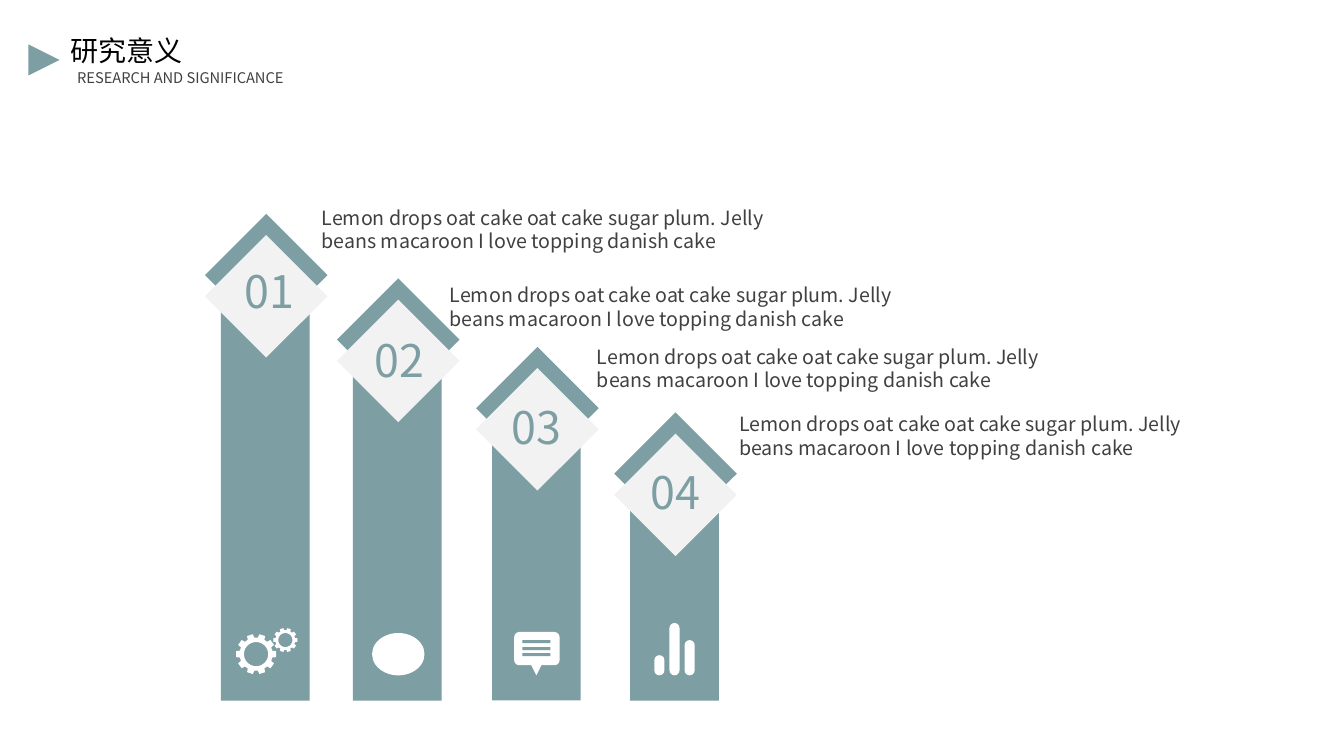
import math

from lxml import etree
from pptx import Presentation
from pptx import util as u
from pptx.dml import color
from pptx.enum import shapes, text
from pptx.oxml import ns

PX = 9144
COLORS = {"teal": "7D9EA3", "light": "F2F2F2", "white": "FFFFFF", "black": "000000", "gray": "404040"}
FONT = "Noto Sans CJK SC"
SHAPE = shapes.MSO_SHAPE
DIAMOND_SIDE = 86
BAR_WIDTH = 88
BAR_BOTTOM = 695
CAPTION = "Lemon drops oat cake oat cake sugar plum. Jelly beans macaroon I love topping danish cake"


class SlideBuilder:
    def __init__(self, slide):
        self.slide = slide

    def paint(self, shape, fill):
        shape.shadow.inherit = False
        shape.fill.solid()
        shape.fill.fore_color.rgb = color.RGBColor.from_string(COLORS[fill])
        shape.line.fill.background()

    def shape(self, kind, box, fill, rotation=0, corner=None):
        shape = self.slide.shapes.add_shape(kind, *(v * PX for v in box))
        self.paint(shape, fill)
        shape.rotation = rotation
        if corner is not None:
            shape.adjustments[0] = corner

    def text(self, content, box, size, fill, wrap=True, centered=False, inset=True, line_pt=None):
        frame = self.slide.shapes.add_textbox(*(v * PX for v in box)).text_frame
        frame.text = content
        frame.word_wrap = wrap
        if not inset:
            frame.margin_left = frame.margin_top = frame.margin_right = frame.margin_bottom = 0
        paragraph = frame.paragraphs[0]
        if centered:
            paragraph.alignment = text.PP_ALIGN.CENTER
        if line_pt:
            paragraph.line_spacing = u.Pt(line_pt)
        font = paragraph.runs[0].font
        font.size = u.Pt(size)
        font.name = FONT
        font.color.rgb = color.RGBColor.from_string(COLORS[fill])
        properties = paragraph.runs[0]._r.get_or_add_rPr()
        etree.SubElement(properties, ns.qn("a:ea"), typeface=FONT)

    def gear(self, center, tip, root, hole, fill, teeth=10):
        def point(radius, angle):
            return tuple(PX * (c + radius * f(angle)) for c, f in zip(center, (math.cos, math.sin)))

        tooth = [(root, -0.21), (tip, -0.15), (tip, 0.15), (root, 0.21)]
        rim = [point(radius, math.tau * i / teeth + turn) for i in range(teeth) for radius, turn in tooth]
        opening = [point(hole, -math.tau * i / 40) for i in range(40)]
        outline = self.slide.shapes.build_freeform(*rim[0])
        outline.add_line_segments(rim[1:])
        outline.move_to(*opening[0])
        outline.add_line_segments(opening[1:])
        self.paint(outline.convert_to_shape(), fill)

    def step(self, number, diamond, number_at, caption_at):
        left, top = diamond
        bar_top = top + 73
        self.shape(SHAPE.RECTANGLE, (left - 2, bar_top, BAR_WIDTH, BAR_BOTTOM - bar_top), "teal")
        for drop, fill in ((0, "teal"), (21, "light")):
            self.shape(SHAPE.RECTANGLE, (left, top + drop, DIAMOND_SIDE, DIAMOND_SIDE), fill, rotation=45)
        self.text(f"{number:02}", (*number_at, 73, 64), 32, "teal", wrap=False)
        self.text(CAPTION, (*caption_at, 461, 57), 14, "gray", inset=False, line_pt=16.8)

    def gears_icon(self):
        self.gear((254, 649), 20, 16.4, 12, "white")
        self.gear((283, 635), 12, 9.8, 7, "white")

    def speech_icon(self):
        self.shape(SHAPE.ISOSCELES_TRIANGLE, (526, 658, 12, 12), "white", rotation=180)
        self.shape(SHAPE.ROUNDED_RECTANGLE, (510, 627, 45, 33), "white", corner=0.15)
        for top in (635, 642, 648):
            self.shape(SHAPE.RECTANGLE, (518, top, 28, 3), "teal")

    def columns_icon(self):
        for i, height in enumerate((20, 52, 35)):
            self.shape(SHAPE.ROUNDED_RECTANGLE, (649 + 15 * i, 670 - height, 10, height), "white", corner=0.5)


def main():
    deck = Presentation()
    deck.slide_width, deck.slide_height = u.Inches(13.33), u.Inches(7.5)
    page = SlideBuilder(deck.slides.add_slide(deck.slide_layouts[6]))

    page.shape(SHAPE.ISOSCELES_TRIANGLE, (28, 44, 31, 31), "teal", rotation=90)
    page.text("研究意义", (60, 28, 383, 44), 20, "black")
    page.text("RESEARCH AND SIGNIFICANCE", (59, 63, 240, 28), 10.5, "gray", wrap=False, centered=True)

    steps = [
        ((221, 230), (233, 257), (319, 204)),
        ((352, 294), (362, 325), (446, 281)),
        ((490, 362), (498, 392), (592, 342)),
        ((627, 427), (635, 456), (733, 409)),
    ]
    for number, places in enumerate(steps, 1):
        page.step(number, *places)

    page.gears_icon()
    page.shape(SHAPE.OVAL, (369, 628, 52, 42), "white")
    page.speech_icon()
    page.columns_icon()

    deck.save("out.pptx")


if __name__ == "__main__":
    main()
